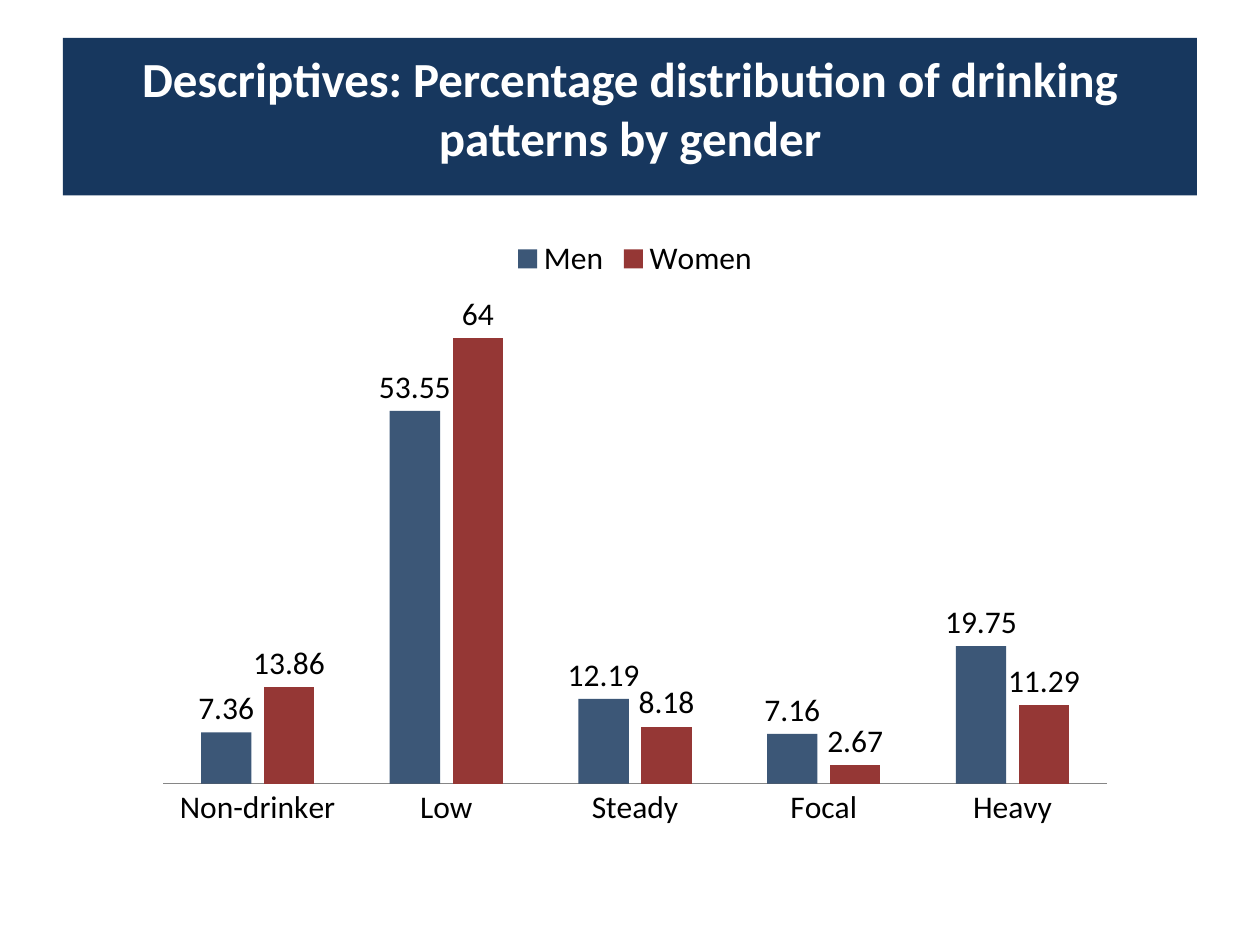
import dataclasses

import lxml.etree
import pptx
import pptx.chart.data
import pptx.dml.color
import pptx.enum.chart
import pptx.enum.shapes
import pptx.enum.text
import pptx.oxml.ns
import pptx.util

Inches = pptx.util.Inches


@dataclasses.dataclass(frozen=True)
class Theme:
    font: str = "Calibri"
    navy: str = "17375E"
    red: str = "953735"
    black: str = "000000"
    white: str = "FFFFFF"
    axis: str = "868686"
    title_size: float = 28
    chart_size: float = 18


THEME = Theme()
CATEGORIES = ["Non-drinker", "Low", "Steady", "Focal", "Heavy"]
SERIES = [
    ("Men", [7.36, 53.55, 12.19, 7.16, 19.75], THEME.navy, 84),
    ("Women", [13.86, 64, 8.18, 2.67, 11.29], THEME.red, 100),
]


def paint(fill, color, opacity=100):
    fill.solid()
    fill.fore_color.rgb = pptx.dml.color.RGBColor.from_string(color)
    if opacity < 100:
        tone = fill._xPr.find(".//" + pptx.oxml.ns.qn("a:srgbClr"))
        alpha = lxml.etree.SubElement(tone, pptx.oxml.ns.qn("a:alpha"))
        alpha.set("val", str(opacity * 1000))


def style_font(font, *, size, color, bold=False):
    font.name = THEME.font
    font.size = pptx.util.Pt(size)
    font.bold = bold
    font.color.rgb = pptx.dml.color.RGBColor.from_string(color)


def write_text(box, text, *, size, color, bold, align, anchor):
    frame = box.text_frame
    frame.word_wrap = True
    frame.vertical_anchor = anchor
    frame.margin_bottom = Inches(0.19)
    para = frame.paragraphs[0]
    para.alignment = align
    span = para.add_run()
    span.text = text
    style_font(span.font, size=size, color=color, bold=bold)


def add_title(page, left, top, width, height):
    banner = page.shapes.add_shape(
        pptx.enum.shapes.MSO_SHAPE.RECTANGLE, left, top, width, height
    )
    banner.shadow.inherit = False
    paint(banner.fill, THEME.navy)
    banner.line.fill.background()
    write_text(
        banner,
        "Descriptives: Percentage distribution of drinking patterns by gender",
        size=THEME.title_size,
        color=THEME.white,
        bold=True,
        align=pptx.enum.text.PP_ALIGN.CENTER,
        anchor=pptx.enum.text.MSO_ANCHOR.MIDDLE,
    )


def add_pattern_chart(page, left, top, width, height):
    data = pptx.chart.data.CategoryChartData()
    data.categories = CATEGORIES
    for name, values, _, _ in SERIES:
        data.add_series(name, values)
    chart = page.shapes.add_chart(
        pptx.enum.chart.XL_CHART_TYPE.COLUMN_CLUSTERED, left, top, width, height, data
    ).chart
    style_font(chart.font, size=THEME.chart_size, color=THEME.black)
    chart.has_title = False
    chart.has_legend = True
    chart.legend.position = pptx.enum.chart.XL_LEGEND_POSITION.TOP
    chart.legend.include_in_layout = False

    category_axis = chart.category_axis
    category_axis.major_tick_mark = pptx.enum.chart.XL_TICK_MARK.NONE
    paint(category_axis.format.line.fill, THEME.axis)
    value_axis = chart.value_axis
    value_axis.visible = False
    value_axis.has_major_gridlines = False
    value_axis.minimum_scale = 0
    value_axis.maximum_scale = 70

    plot = chart.plots[0]
    plot.vary_by_categories = False
    plot.gap_width = 150
    plot.overlap = -25
    for series, (_, _, color, opacity) in zip(plot.series, SERIES):
        paint(series.format.fill, color, opacity)
        labels = series.data_labels
        labels.show_value = True
        labels.position = pptx.enum.chart.XL_LABEL_POSITION.OUTSIDE_END
        style_font(labels.font, size=THEME.chart_size, color=THEME.black)


def main():
    deck = pptx.Presentation()
    deck.slide_width = Inches(10)
    deck.slide_height = Inches(7.5)
    page = deck.slides.add_slide(deck.slide_layouts[6])
    add_title(page, Inches(0.5), Inches(0.3), Inches(9), Inches(1.25))
    add_pattern_chart(page, Inches(1.14), Inches(1.78), Inches(7.8), Inches(4.88))
    deck.save("out.pptx")


if __name__ == "__main__":
    main()
